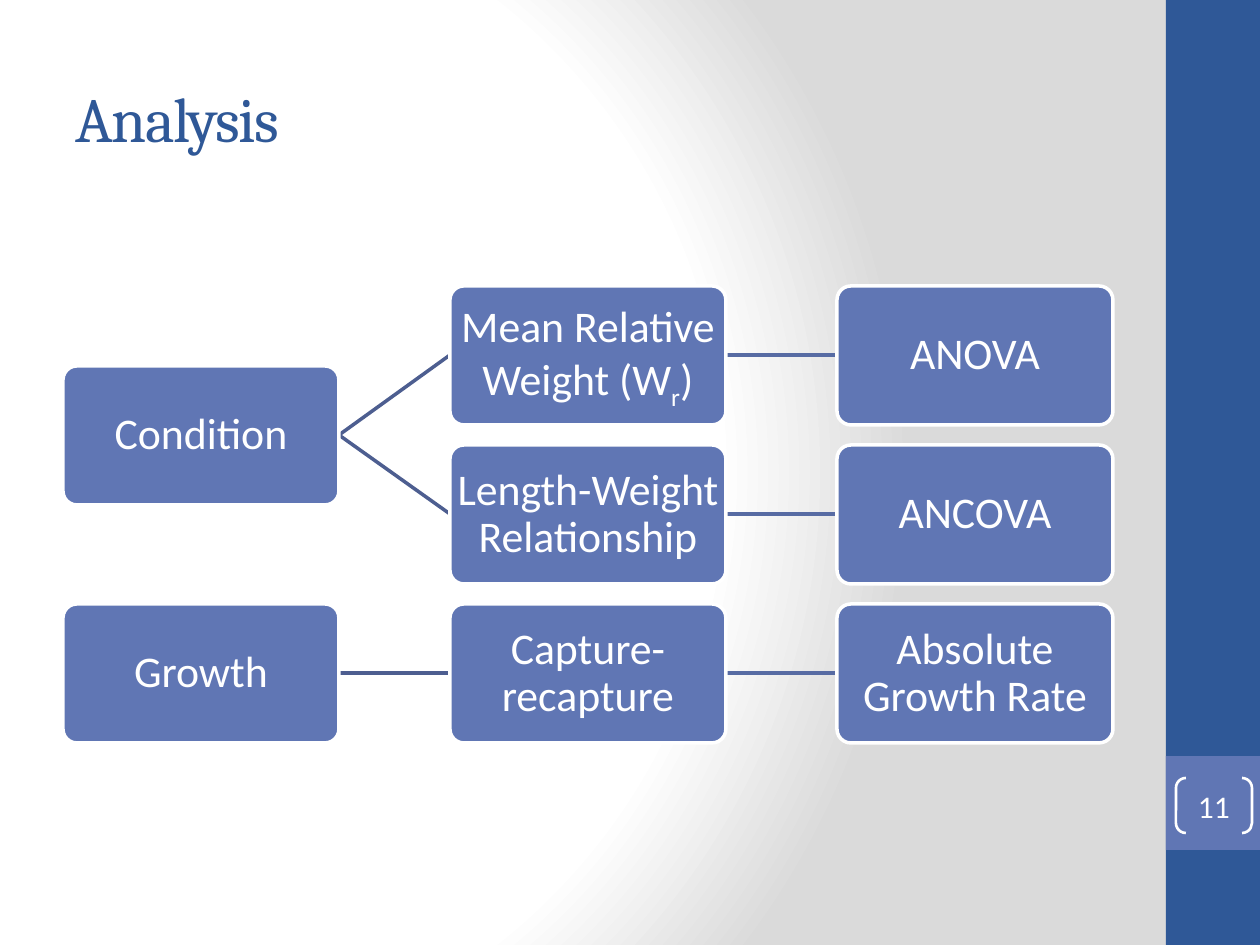
import dataclasses

import lxml.etree
import pptx
import pptx.dml.color
import pptx.enum.shapes
import pptx.enum.text
import pptx.oxml
import pptx.oxml.ns
import pptx.util

SCALE = 914400 / 126
SHAPES = pptx.enum.shapes.MSO_SHAPE
ALIGN = pptx.enum.text.PP_ALIGN
QN = pptx.oxml.ns.qn


@dataclasses.dataclass(frozen=True)
class Theme:
    """Colours, fonts and type sizes of the slide."""
    navy: str = "2F5897"
    blue: str = "6076B4"
    white: str = "FFFFFF"
    grey: str = "DADADA"
    branch: str = "4D5E90"
    method: str = "576BA3"
    heading_font: str = "Cambria"
    body_font: str = "Calibri"
    title_size: int = 36
    node_size: int = 25
    number_size: int = 18


THEME = Theme()


def emu(px):
    """Turn px into EMU."""
    return pptx.util.Emu(round(px * SCALE))


def rgb(colour):
    """Turn a hex colour into an RGBColor."""
    return pptx.dml.color.RGBColor.from_string(colour)


def add_block(page, kind, box, fill=None, line=None, weight=2, corner=None):
    """Place a preset shape in a box of left, top, width and height."""
    shape = page.shapes.add_shape(kind, *map(emu, box))
    shape.shadow.inherit = False
    if fill:
        shape.fill.solid()
        shape.fill.fore_color.rgb = rgb(fill)
    else:
        shape.fill.background()
    if line:
        shape.line.color.rgb = rgb(line)
        shape.line.width = pptx.util.Pt(weight)
    else:
        shape.line.fill.background()
    if corner is not None:
        shape.adjustments[0] = corner
    return shape


def write(shape, parts, font, size, colour, align, margins):
    """Write one paragraph of (text, run attributes) parts and return it."""
    frame = shape.text_frame
    frame.word_wrap = True
    frame.vertical_anchor = pptx.enum.text.MSO_ANCHOR.MIDDLE
    frame.margin_left = frame.margin_right = emu(margins[0])
    frame.margin_top = frame.margin_bottom = emu(margins[1])
    para = frame.paragraphs[0]
    para.alignment = align
    para.font.name = font
    para.font.size = pptx.util.Pt(size)
    para.font.color.rgb = rgb(colour)
    for text, attributes in parts:
        span = para.add_run()
        span.text = text
        for name, value in attributes.items():
            span._r.get_or_add_rPr().set(name, value)
    return para


def add_background(page):
    """Fill the page with a circular gradient from white to grey."""
    page.background.fill.gradient()
    old = page.element.find(".//" + QN("a:gradFill"))
    stops = "".join(
        f'<a:gs pos="{place}"><a:srgbClr val="{colour}"/></a:gs>'
        for place, colour in ((0, THEME.white), (75000, THEME.white), (100000, THEME.grey))
    )
    gradient = pptx.oxml.parse_xml(
        f'<a:gradFill {pptx.oxml.ns.nsdecls("a")} rotWithShape="1"><a:gsLst>{stops}</a:gsLst>'
        '<a:path path="circle"><a:fillToRect l="20000" t="50000" r="100000" b="50000"/>'
        '</a:path></a:gradFill>'
    )
    old.getparent().replace(old, gradient)


def add_sidebar(page, box, number):
    """Draw the side band with the page number in brackets."""
    left, top, width, height = box
    add_block(page, SHAPES.RECTANGLE, box, THEME.navy)
    add_block(page, SHAPES.RECTANGLE, (left, top + 756, width, width), THEME.blue)
    bracket = add_block(page, SHAPES.DOUBLE_BRACKET, (left + 10, top + 778, 76, 55),
                        line=THEME.white, weight=1.5, corner=0.18)
    write(bracket, [(number, {})], THEME.body_font, THEME.number_size,
          THEME.white, ALIGN.CENTER, (0, 0))


def add_title(page, box, text):
    """Write the slide title."""
    title = page.shapes.add_textbox(*map(emu, box))
    write(title, [(text, {"spc": "-100"})], THEME.heading_font, THEME.title_size,
          THEME.navy, ALIGN.LEFT, (13, 6))


def add_link(page, start, end, colour):
    """Draw a straight link between two points."""
    link = page.shapes.add_connector(pptx.enum.shapes.MSO_CONNECTOR.STRAIGHT,
                                     *map(emu, start + end))
    link.line.color.rgb = rgb(colour)
    link.line.width = pptx.util.Pt(2)
    lxml.etree.SubElement(link.element.spPr, QN("a:effectLst"))


def add_tree(page, box, nodes, links):
    """Draw a left-to-right tree of nodes keyed by name as (column, row, parts)."""
    left, top, width, height = box
    node_width, node_height = 276, 139
    column_step = (width - node_width) // 2
    row_step = (height - node_height) // 2
    corners = {name: (left + column * column_step, top + round(row * row_step))
               for name, (column, row, parts) in nodes.items()}
    for source, target in links:
        start_x, start_y = corners[source]
        end_x, end_y = corners[target]
        middle = node_height // 2
        colour = THEME.branch if nodes[source][0] == 0 else THEME.method
        add_link(page, (start_x + node_width, start_y + middle), (end_x, end_y + middle), colour)
    for name, (column, row, parts) in nodes.items():
        node = add_block(page, SHAPES.ROUNDED_RECTANGLE,
                         corners[name] + (node_width, node_height),
                         THEME.blue, THEME.white, corner=0.1)
        para = write(node, parts, THEME.body_font, THEME.node_size,
                     THEME.white, ALIGN.CENTER, (2, 2))
        para.line_spacing = 0.9


def main():
    """Build the analysis slide and save it."""
    deck = pptx.Presentation()
    deck.slide_width, deck.slide_height = emu(1260), emu(945)
    page = deck.slides.add_slide(deck.slide_layouts[6])
    add_background(page)
    add_sidebar(page, (1166, 0, 94, 945), "11")
    add_title(page, (63, 38, 1050, 158), "Analysis")
    nodes = {
        "condition": (0, 0.5, [("Condition", {})]),
        "weight": (1, 0, [("Mean Relative Weight (W", {}),
                          ("r", {"baseline": "-25000"}), (")", {})]),
        "anova": (2, 0, [("ANOVA", {})]),
        "length": (1, 1, [("Length-Weight Relationship", {})]),
        "ancova": (2, 1, [("ANCOVA", {})]),
        "growth": (0, 2, [("Growth", {})]),
        "recapture": (1, 2, [("Capture-recapture", {})]),
        "rate": (2, 2, [("Absolute Growth Rate", {})]),
    }
    links = [("condition", "weight"), ("weight", "anova"),
             ("condition", "length"), ("length", "ancova"),
             ("growth", "recapture"), ("recapture", "rate")]
    add_tree(page, (63, 286, 1050, 457), nodes, links)
    deck.save("out.pptx")


if __name__ == "__main__":
    main()
